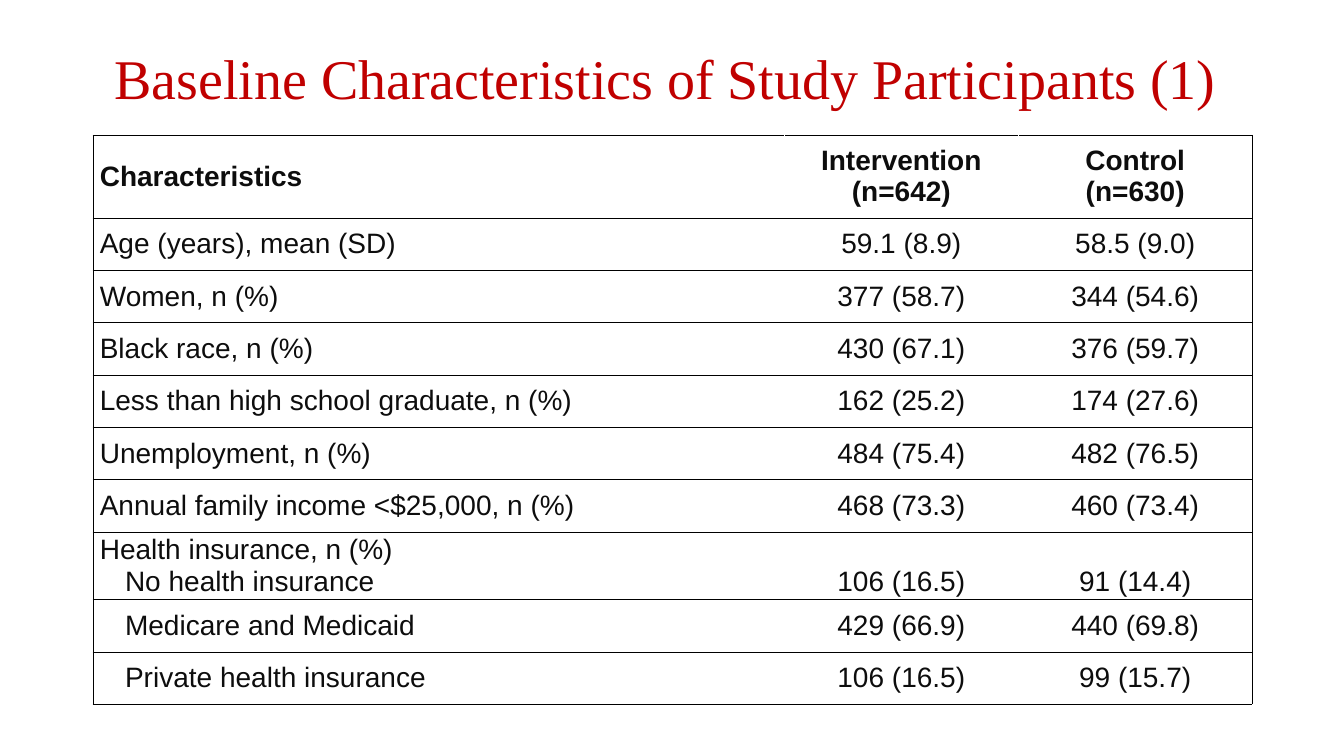
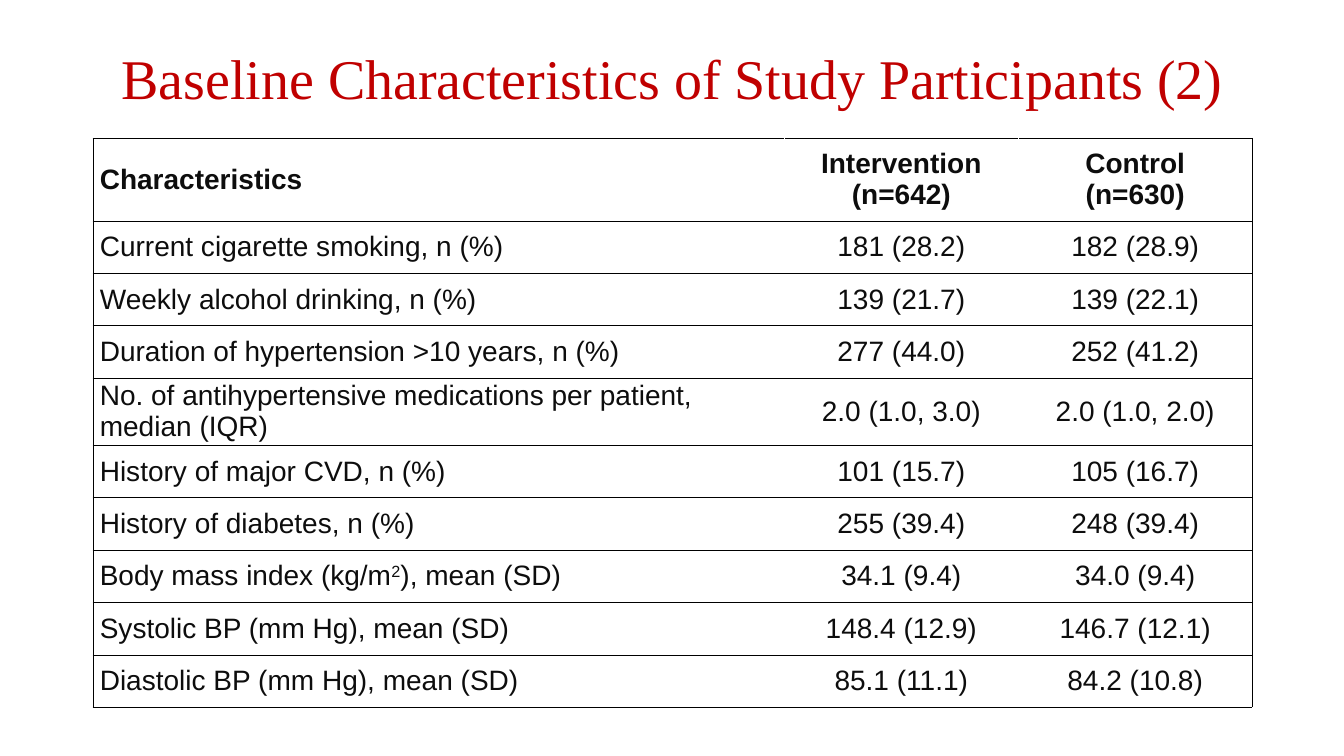
"""Build two slides of baseline characteristics, each a title over a ruled table."""
import pptx
import pptx.dml.color
import pptx.enum.text
import pptx.oxml.ns
import pptx.util
import lxml.etree

Inches = pptx.util.Inches
Pt = pptx.util.Pt
CENTER = pptx.enum.text.PP_ALIGN.CENTER
LEFT = pptx.enum.text.PP_ALIGN.LEFT
MIDDLE = pptx.enum.text.MSO_ANCHOR.MIDDLE
RED, INK, BLACK, WHITE = "C00000", "0D0D0D", "000000", "FFFFFF"
WIDTHS = [6.86, 2.32, 2.32]
HEAD, ROW = 0.82, 0.52
CELL = {
    "margin_left": Inches(0.07),
    "margin_right": Inches(0.07),
    "margin_top": 0,
    "margin_bottom": 0,
    "vertical_anchor": MIDDLE,
}
TITLE = {"name": "Times New Roman", "size": Pt(40)}
BODY = {"name": "Arial", "size": Pt(20)}


def write(para, text, style, color):
    """Fill a paragraph, raising each part held between carets."""
    for i, part in enumerate(text.split("^")):
        run = para.add_run()
        run.text = part
        for key, value in style.items():
            setattr(run.font, key, value)
        run.font.color.rgb = pptx.dml.color.RGBColor.from_string(color)
        if i % 2:
            run._r.get_or_add_rPr().set("baseline", "30000")


def border(cell, side, color, width):
    """Rule one side of a cell."""
    qn = pptx.oxml.ns.qn
    props = cell._tc.get_or_add_tcPr()
    line = lxml.etree.SubElement(props, qn(f"a:ln{side}"), w=str(Pt(width)))
    fill = lxml.etree.SubElement(line, qn("a:solidFill"))
    lxml.etree.SubElement(fill, qn("a:srgbClr"), val=color)


header = ("Characteristics", "Intervention\n(n=642)", "Control\n(n=630)")
pages = [
    ("Baseline Characteristics of Study Participants (1) ", 1.34, [
        ("Age (years), mean (SD)", "59.1 (8.9)", "58.5 (9.0)"),
        ("Women, n (%)", "377 (58.7)", "344 (54.6)"),
        ("Black race, n (%)", "430 (67.1)", "376 (59.7)"),
        ("Less than high school graduate, n (%)", "162 (25.2)", "174 (27.6)"),
        ("Unemployment, n (%)", "484 (75.4)", "482 (76.5)"),
        ("Annual family income <$25,000, n (%)", "468 (73.3)", "460 (73.4)"),
        ("Health insurance, n (%)\n\tNo health insurance", "106 (16.5)", "91 (14.4)"),
        ("\tMedicare and Medicaid", "429 (66.9)", "440 (69.8)"),
        ("\tPrivate health insurance", "106 (16.5)", "99 (15.7)"),
    ]),
    ("Baseline Characteristics of Study Participants (2)", 1.37, [
        ("Current cigarette smoking, n (%)", "181 (28.2)", "182 (28.9)"),
        ("Weekly alcohol drinking, n (%)", "139 (21.7)", "139 (22.1)"),
        ("Duration of hypertension >10 years, n (%)", "277 (44.0)", "252 (41.2)"),
        ("No. of antihypertensive medications per patient, median (IQR)",
         "2.0 (1.0, 3.0)", "2.0 (1.0, 2.0)"),
        ("History of major CVD, n (%)", "101 (15.7)", "105 (16.7)"),
        ("History of diabetes, n (%)", "255 (39.4)", "248 (39.4)"),
        ("Body mass index (kg/m^2^), mean (SD)", "34.1 (9.4)", "34.0 (9.4)"),
        ("Systolic BP (mm Hg), mean (SD)", "148.4 (12.9)", "146.7 (12.1)"),
        ("Diastolic BP (mm Hg), mean (SD)", "85.1 (11.1)", "84.2 (10.8)"),
    ]),
]

deck = pptx.Presentation()
deck.slide_width, deck.slide_height = Inches(13.33), Inches(7.5)

for title, top, data in pages:
    slide = deck.slides.add_slide(deck.slide_layouts[6])
    box = slide.shapes.add_textbox(Inches(0.92), Inches(0.4), Inches(11.5), Inches(0.82))
    frame = box.text_frame
    frame.word_wrap = True
    frame.vertical_anchor = MIDDLE
    para = frame.paragraphs[0]
    para.alignment = CENTER
    para.line_spacing = 0.9
    write(para, title, TITLE, RED)

    rows = [header, *data]
    height = HEAD + ROW * len(data)
    table = slide.shapes.add_table(
        len(rows), len(WIDTHS), Inches(0.92), Inches(top), Inches(11.5), Inches(height)
    ).table
    table.first_row = table.horz_banding = False
    for col, width in zip(table.columns, WIDTHS):
        col.width = Inches(width)

    for r, row in enumerate(rows):
        table.rows[r].height = Inches(ROW if r else HEAD)
        for c, text in enumerate(row):
            cell = table.cell(r, c)
            for key, value in CELL.items():
                setattr(cell, key, value)
            for side, outer in (("L", c == 0), ("R", c == 2), ("T", True), ("B", True)):
                border(cell, side, *((BLACK, 0.25) if outer else (WHITE, 1)))
            cell.fill.solid()
            cell.fill.fore_color.rgb = pptx.dml.color.RGBColor.from_string(WHITE)
            for i, line in enumerate(text.split("\n")):
                para = cell.text_frame.add_paragraph() if i else cell.text_frame.paragraphs[0]
                para.alignment = CENTER if c else LEFT
                if line.startswith("\t"):
                    para._p.get_or_add_pPr().set("marL", str(Inches(0.25)))
                if c and r and "\n" in row[0]:
                    para.line_spacing = 2.0
                write(para, line.strip(), {**BODY, "bold": r == 0}, INK)

deck.save("out.pptx")
